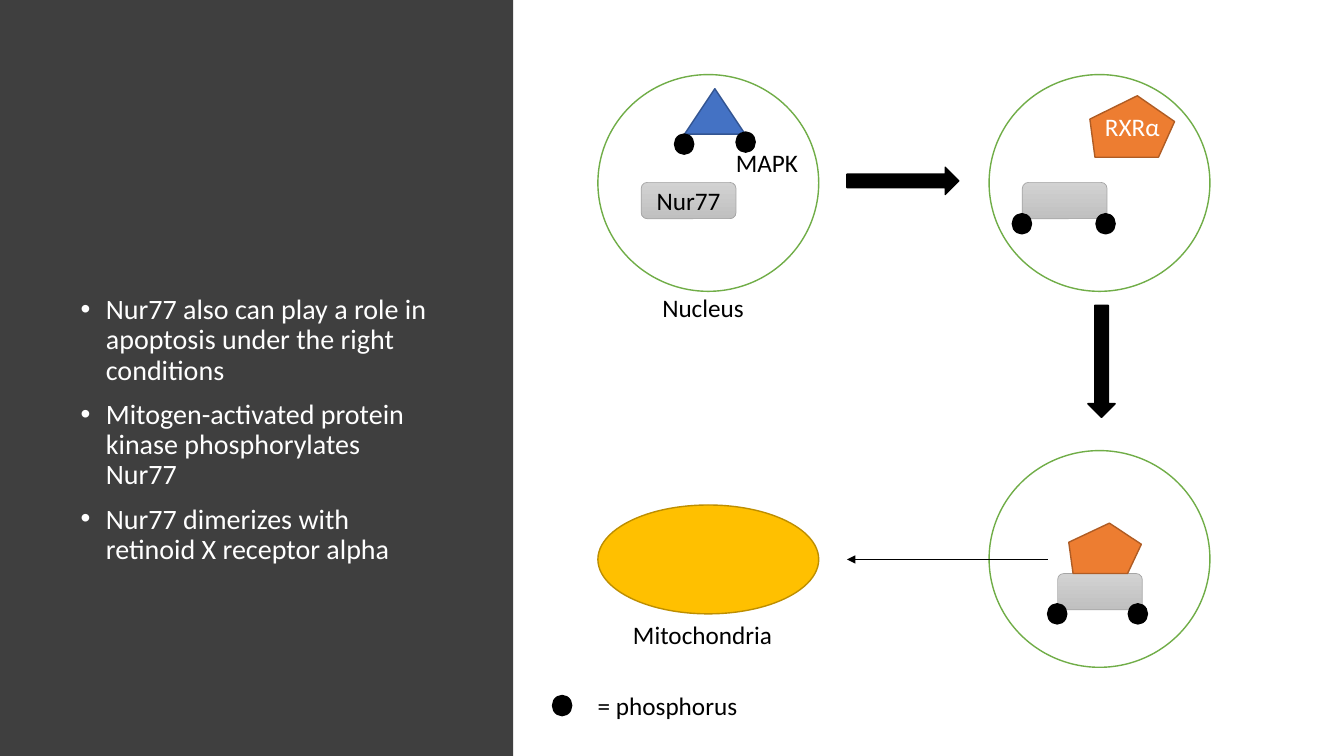
from lxml import etree
from pptx import Presentation
from pptx.dml.color import RGBColor
from pptx.enum.shapes import MSO_CONNECTOR, MSO_SHAPE
from pptx.enum.text import MSO_ANCHOR, MSO_AUTO_SIZE, PP_ALIGN
from pptx.oxml.ns import qn
from pptx.util import Inches, Pt

RECT, OVAL = MSO_SHAPE.RECTANGLE, MSO_SHAPE.OVAL
ROUNDED, TRIANGLE = MSO_SHAPE.ROUNDED_RECTANGLE, MSO_SHAPE.ISOSCELES_TRIANGLE
ARROW, STRAIGHT = MSO_SHAPE.RIGHT_ARROW, MSO_CONNECTOR.STRAIGHT
MIDDLE, TOP = MSO_ANCHOR.MIDDLE, MSO_ANCHOR.TOP
CENTER, LEFT = PP_ALIGN.CENTER, PP_ALIGN.LEFT
NO_FIT, GROW = MSO_AUTO_SIZE.NONE, MSO_AUTO_SIZE.SHAPE_TO_FIT_TEXT

WHITE = RGBColor(0xFF, 0xFF, 0xFF)
BLACK = RGBColor(0, 0, 0)
CHARCOAL = RGBColor(0x3F, 0x3F, 0x3F)
GREEN = RGBColor(0x70, 0xAD, 0x47)
GOLD = RGBColor(0xFF, 0xC0, 0x00)
DARK_GOLD = RGBColor(0xBD, 0x8E, 0x00)
BLUE = RGBColor(0x44, 0x72, 0xC4)
DARK_BLUE = RGBColor(0x32, 0x54, 0x91)
ORANGE = RGBColor(0xED, 0x7D, 0x31)
DARK_ORANGE = RGBColor(0xAF, 0x5C, 0x24)
LIGHT_GRAY = RGBColor(0xD2, 0xD2, 0xD2)
MID_GRAY = RGBColor(0xC0, 0xC0, 0xC0)
EDGE_GRAY = RGBColor(0xA5, 0xA5, 0xA5)

BULLETS = [
    "Nur77 also can play a role in apoptosis under the right conditions",
    "Mitogen-activated protein kinase phosphorylates Nur77",
    "Nur77 dimerizes with retinoid X receptor alpha",
]
PENTAGON = [(0.06, 1), (0.81, 1), (1, 0.42), (0.56, 0), (0, 0.38)]


class Diagram:
    font = "Calibri"
    label_size = 18
    body_size = 20

    def __init__(self, prs):
        self.s = prs.slides.add_slide(prs.slide_layouts[1])
        title = self.s.shapes.title._element
        title.getparent().remove(title)

    def style_runs(self, p, size, color):
        for r in p.runs:
            r.font.name = self.font
            r.font.size = Pt(size)
            r.font.color.rgb = color

    def finish(self, sp, fill, line=None, width=1):
        sp.shadow.inherit = False
        sp.fill.solid()
        sp.fill.fore_color.rgb = fill
        if line is None:
            sp.line.fill.background()
        else:
            sp.line.color.rgb = line
            sp.line.width = Pt(width)
        return sp

    def shape(self, kind, x, y, w, h, fill, line=None, width=1):
        sp = self.s.shapes.add_shape(kind, Inches(x), Inches(y), Inches(w), Inches(h))
        return self.finish(sp, fill, line, width)

    def caption(self, sp, text, color):
        tf = sp.text_frame
        tf.text = text
        tf.word_wrap = False
        tf.vertical_anchor = MIDDLE
        tf.paragraphs[0].alignment = CENTER
        self.style_runs(tf.paragraphs[0], self.label_size, color)

    def label(self, text, x, y, w):
        sp = self.s.shapes.add_textbox(Inches(x), Inches(y), Inches(w), Inches(0.4))
        tf = sp.text_frame
        tf.text = text
        tf.word_wrap = False
        tf.auto_size = GROW
        self.style_runs(tf.paragraphs[0], self.label_size, BLACK)

    def side_panel(self):
        panel = self.shape(RECT, 0, 0, 5.09, 7.5, CHARCOAL)
        self.s.shapes._spTree.insert(2, panel._element)

    def bullets(self, items, x, y, w, h):
        sp = self.s.placeholders[1]
        sp.left, sp.top, sp.width, sp.height = Inches(x), Inches(y), Inches(w), Inches(h)
        tf = sp.text_frame
        tf.text = "\n".join(items)
        tf.word_wrap = True
        tf.auto_size = NO_FIT
        tf.vertical_anchor = TOP
        for p in tf.paragraphs:
            p.alignment = LEFT
            p.line_spacing = 0.9
            p.space_before = Pt(10)
            pPr = p._p.get_or_add_pPr()
            pPr.set("marL", str(Inches(0.25)))
            pPr.set("indent", str(-Inches(0.25)))
            etree.SubElement(pPr, qn("a:buFont")).set("typeface", "Arial")
            etree.SubElement(pPr, qn("a:buChar")).set("char", "•")
            self.style_runs(p, self.body_size, WHITE)

    def nucleus(self, x, y):
        self.shape(OVAL, x, y, 2.19, 2.15, WHITE, GREEN)

    def phosphorus(self, x, y):
        self.shape(OVAL, x, y, 0.19, 0.2, BLACK, BLACK)

    def nur77(self, x, y, w=0.84):
        sp = self.shape(ROUNDED, x, y, w, 0.36, MID_GRAY, EDGE_GRAY, 0.5)
        sp.fill.gradient()
        sp.fill.gradient_angle = 270
        for stop, color in zip(sp.fill.gradient_stops, (LIGHT_GRAY, MID_GRAY)):
            stop.color.rgb = color
        return sp

    def rxr(self, x, y, w, h):
        points = [(Inches(x + u * w), Inches(y + v * h)) for u, v in PENTAGON]
        builder = self.s.shapes.build_freeform(*points[0])
        builder.add_line_segments(points[1:], close=True)
        return self.finish(builder.convert_to_shape(), ORANGE, DARK_ORANGE)

    def block_arrow(self, x, y, rotation=0):
        self.shape(ARROW, x, y, 1.11, 0.27, BLACK, BLACK).rotation = rotation

    def thin_arrow(self, x1, x2, y):
        line = self.s.shapes.add_connector(
            STRAIGHT, Inches(x1), Inches(y), Inches(x2), Inches(y))
        line.line.color.rgb = BLACK
        line.line.width = Pt(0.5)
        ln = line.line._get_or_add_ln()
        etree.SubElement(ln, qn("a:tailEnd")).set("type", "triangle")
        etree.SubElement(line._element.spPr, qn("a:effectLst"))


def main():
    prs = Presentation()
    prs.slide_width, prs.slide_height = Inches(13.33), Inches(7.5)
    d = Diagram(prs)
    d.side_panel()
    d.bullets(BULLETS, 0.7, 2.88, 3.68, 3.74)

    for x, y in [(5.93, 0.74), (9.81, 0.74), (9.81, 4.47)]:
        d.nucleus(x, y)
    d.shape(OVAL, 5.93, 5.01, 2.19, 1.08, GOLD, DARK_GOLD)

    d.caption(d.nur77(6.36, 1.81, 0.94), "Nur77", BLACK)
    d.shape(TRIANGLE, 6.79, 0.88, 0.6, 0.45, BLUE, DARK_BLUE)
    d.nur77(10.14, 1.81)
    d.nur77(10.49, 5.69)
    d.caption(d.rxr(10.81, 0.95, 0.84, 0.61), "RXRα", WHITE)
    d.rxr(10.6, 5.19, 0.72, 0.5)
    for x, y in [(7.3, 1.31), (6.69, 1.33), (5.48, 6.9), (10.04, 2.12),
                 (10.87, 2.12), (10.39, 5.99), (11.19, 5.99)]:
        d.phosphorus(x, y)

    d.block_arrow(8.4, 1.66)
    d.block_arrow(10.37, 3.45, 90)
    d.thin_arrow(10.39, 8.4, 5.55)

    for text, x, y, w in [("MAPK", 7.2, 1.41, 0.88), ("Nucleus", 6.47, 2.85, 1.02),
                          ("Mitochondria", 6.18, 6.09, 1.6),
                          ("= phosphorus", 5.83, 6.8, 1.72)]:
        d.label(text, x, y, w)
    prs.save("out.pptx")


if __name__ == "__main__":
    main()
